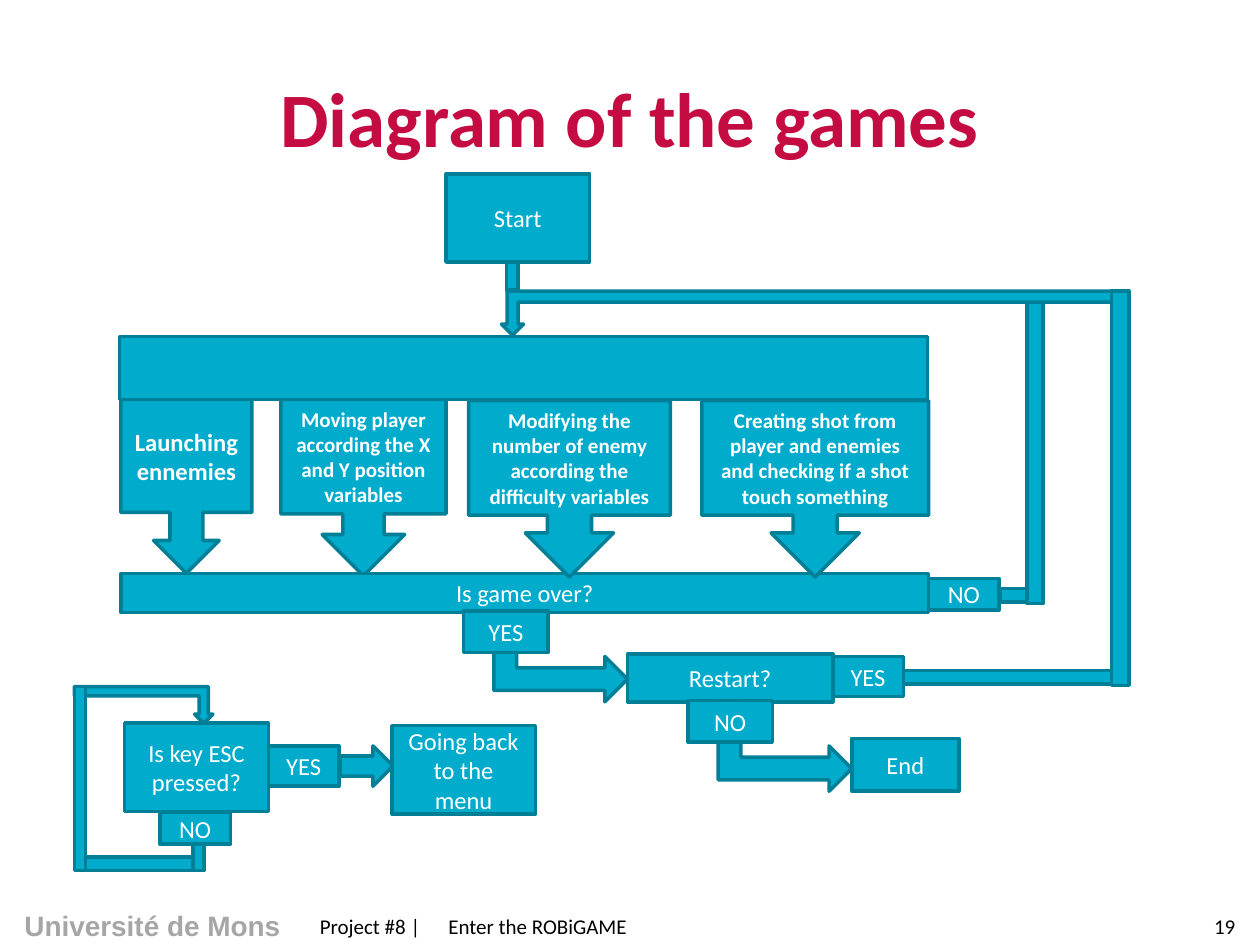
from dataclasses import dataclass

from lxml import etree
from pptx import Presentation
from pptx.dml.color import RGBColor as Rgb
from pptx.enum import shapes, text
from pptx.oxml import ns
from pptx.util import Inches, Pt

Kind = shapes.MSO_SHAPE
Align = text.PP_ALIGN


@dataclass(frozen=True)
class Theme:
    """Colours, fonts and type sizes."""
    fill: str = "00ABCC"
    edge: str = "007F97"
    head: str = "C40C42"
    pale: str = "A6A6A6"
    ink: str = "000000"
    light: str = "FFFFFF"
    font: str = "Calibri"
    brand: str = "Arial"
    big: int = 44
    mark: int = 16
    body: int = 14
    small: int = 12
    line: int = 2


T = Theme()


def write(frame, words, size=T.body, color=T.light, bold=False, font=T.font,
          align=Align.CENTER, tab=None):
    """Fill a text frame with one formatted paragraph."""
    frame.word_wrap = True
    frame.vertical_anchor = text.MSO_ANCHOR.MIDDLE
    para = frame.paragraphs[0]
    para.alignment = align
    if tab:
        stops = etree.SubElement(para._p.get_or_add_pPr(), ns.qn("a:tabLst"))
        etree.SubElement(stops, ns.qn("a:tab"), pos=str(Inches(tab)), algn="l")
    run = para.add_run()
    run.text = words
    run.font.name, run.font.size, run.font.bold = font, Pt(size), bold
    run.font.color.rgb = Rgb.from_string(color)


def spot(box, x, y, w, h):
    """Turn an offset within a box into slide lengths."""
    return [Inches(v) for v in (box[0] + x, box[1] + y, w, h)]


def block(slide, box, area, words=None, kind=Kind.RECTANGLE, turn=0, flip=False,
          **style):
    """Add one filled shape, with text if given."""
    shape = slide.shapes.add_shape(kind, *spot(box, *area))
    shape.shadow.inherit = False
    shape.fill.solid()
    shape.fill.fore_color.rgb = Rgb.from_string(T.fill)
    shape.line.color.rgb = Rgb.from_string(T.edge)
    shape.line.width = Pt(T.line)
    shape.rotation = turn
    if flip:
        shape._element.spPr.find(ns.qn("a:xfrm")).set("flipH", "1")
    if words:
        write(shape.text_frame, words, **style)


def label(slide, box, area, words, **style):
    """Add a plain text box."""
    item = slide.shapes.add_textbox(*spot(box, *area))
    write(item.text_frame, words, **style)


def title(slide, box):
    """Place the slide title."""
    head = slide.shapes.title
    head.left, head.top, head.width, head.height = spot(box, 0, 0, 9, 1.25)
    write(head.text_frame, "Diagram of the games", size=T.big, color=T.head,
          bold=True)


def game(slide, box):
    """Draw the start, the four parallel tasks and the game-over test."""
    tasks = [
        (0.01, 1.79, 1.04, 1.38, T.body, "Launching ennemies"),
        (1.28, 1.79, 1.31, 1.4, T.small,
         "Moving player according the X and Y position variables"),
        (2.77, 1.8, 1.6, 1.4, T.small,
         "Modifying the number of enemy according the difficulty variables"),
        (4.62, 1.8, 1.8, 1.4, T.small,
         "Creating shot from player and enemies and checking if a shot "
         "touch something"),
    ]

    def draw(group):
        for *area, size, words in group:
            block(slide, box, area, words, Kind.DOWN_ARROW_CALLOUT, size=size,
                  bold=True)

    draw(tasks[:2])
    block(slide, box, (0.01, 3.17, 6.41, 0.31), "Is game over?",
          Kind.FLOWCHART_PROCESS)
    block(slide, box, (0, 1.29, 6.41, 0.5))
    draw(tasks[2:])
    block(slide, box, (2.59, 0, 1.14, 0.7), "Start", Kind.FLOWCHART_PROCESS)
    block(slide, box, (3.07, 0.7, 0.09, 0.22))


def loop(slide, box):
    """Draw the return paths that lead back to the tasks."""
    block(slide, box, (0, 0, 4.98, 0.35), kind=Kind.BENT_UP_ARROW, turn=180)
    block(slide, box, (3.39, 2.28, 0.56, 0.25), "NO")
    for area in [(3.19, 3.01, 1.66, 0.11), (4.84, 0, 0.14, 3.13),
                 (3.96, 2.36, 0.21, 0.11), (4.17, 0.09, 0.13, 2.39)]:
        block(slide, box, area)


def branch(slide, box, words):
    """Draw an answer box with its bent arrow to the right."""
    block(slide, box, (0.41, -0.17, 0.72, 1.06), kind=Kind.BENT_UP_ARROW, turn=90)
    block(slide, box, (0, 0, 0.67, 0.33), words)


def restart(slide, box):
    """Draw the restart test and the end."""
    branch(slide, box, "YES")
    block(slide, box, (1.3, 0.34, 1.63, 0.38), "Restart?")
    block(slide, box, (2.93, 0.36, 0.56, 0.32), "YES")
    block(slide, box, (3.08, 1.01, 0.85, 0.42), "End")
    branch(slide, (box[0] + 1.78, box[1] + 0.71), "NO")


def escape(slide, box):
    """Draw the escape-key test with its own loop."""
    block(slide, box, (0, 0, 1.1, 0.29), kind=Kind.BENT_UP_ARROW, turn=180,
          flip=True)
    block(slide, box, (0.4, 0.29, 1.14, 0.7), "Is key ESC pressed?",
          Kind.FLOWCHART_PROCESS)
    block(slide, box, (0.68, 1, 0.56, 0.25), "NO")
    block(slide, box, (1.54, 0.47, 0.56, 0.32), "YES")
    block(slide, box, (2.11, 0.47, 0.42, 0.32), kind=Kind.RIGHT_ARROW)
    block(slide, box, (2.52, 0.31, 1.14, 0.7), "Going back to the menu",
          Kind.FLOWCHART_PROCESS)
    for area in [(0, 0, 0.09, 1.46), (0.09, 1.35, 0.85, 0.11),
                 (0.94, 1.25, 0.09, 0.21)]:
        block(slide, box, area)


def footer(slide, box):
    """Place the school name, project line and page number."""
    label(slide, box, (-0.01, 0, 2.44, 0.37), "Université de Mons", size=T.mark,
          color=T.pale, bold=True, font=T.brand)
    label(slide, box, (2.44, 0.04, 7, 0.3), "Project #8 |\tEnter the ROBiGAME",
          size=T.small, color=T.ink, align=Align.LEFT, tab=1.02)
    label(slide, box, (9.44, 0.04, 0.56, 0.3), "19", size=T.small, color=T.ink)


def main():
    """Build and save the slide."""
    deck = Presentation()
    deck.slide_width, deck.slide_height = Inches(10), Inches(7.5)
    slide = deck.slides.add_slide(deck.slide_layouts[5])
    title(slide, (0.5, 0.3))
    game(slide, (0.95, 1.38))
    loop(slide, (3.98, 2.31))
    restart(slide, (3.68, 4.85))
    escape(slide, (0.59, 5.45))
    footer(slide, (0, 7.16))
    deck.save("out.pptx")


if __name__ == "__main__":
    main()
